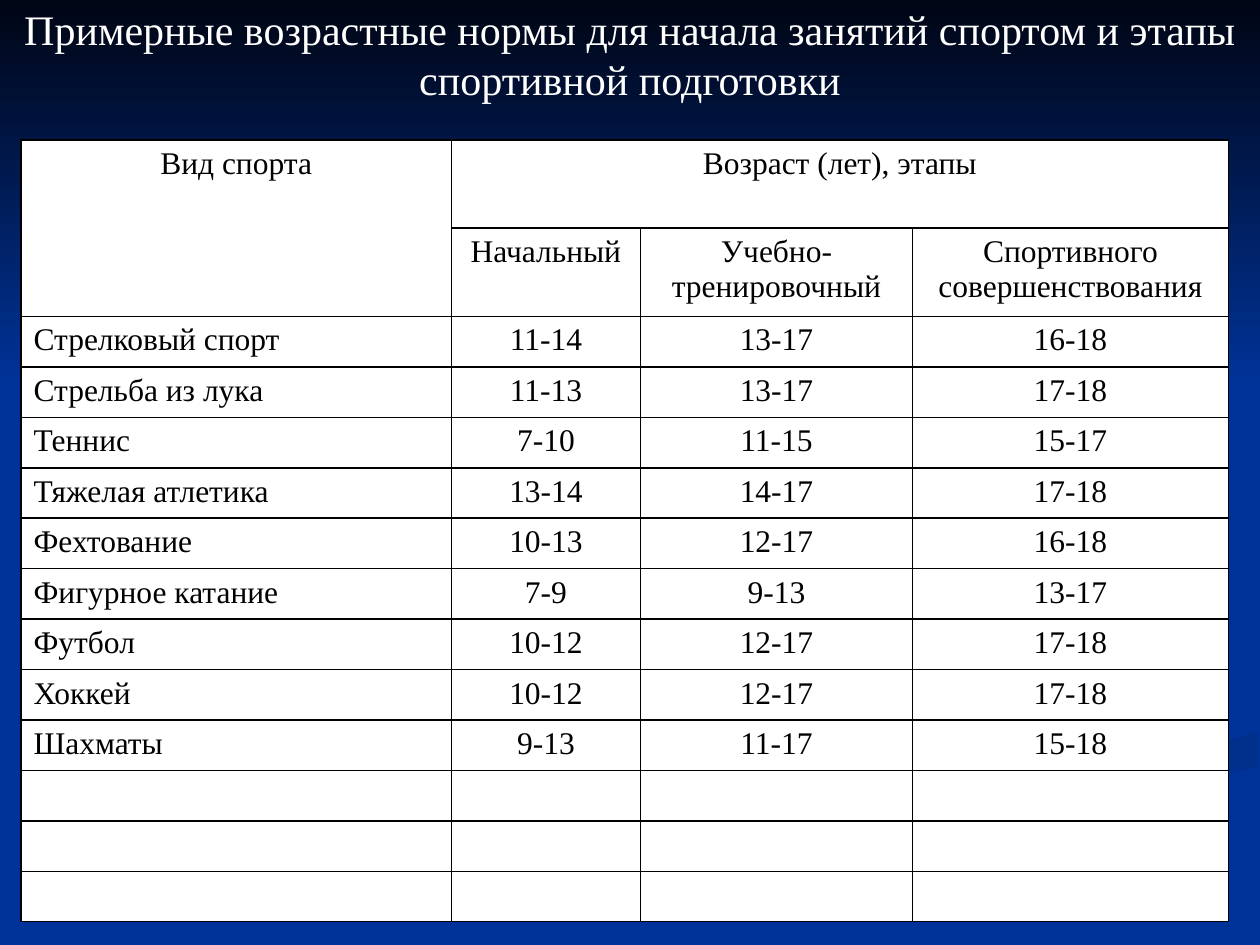
import pptx
import pptx.util
import pptx.dml.color
import pptx.enum.shapes
import pptx.enum.text
import pptx.oxml
import pptx.oxml.ns

Pt = pptx.util.Pt
RGB = pptx.dml.color.RGBColor.from_string
ALIGN = pptx.enum.text.PP_ALIGN

THEME = {
    "font": "Times New Roman", "title_size": 24, "table_size": 18, "empty_size": 12,
    "background": "003399", "night": "000514", "ribbon": "002F8C", "faint": "003193",
    "title": "FFFFFF", "cell": "FFFFFF", "ink": "000000",
}


def paint(shape, start, end, clockwise):
    """Fill a borderless shape with a two-colour gradient."""
    shape.shadow.inherit = False
    shape.line.fill.background()
    shape.fill.gradient()
    shape.fill.gradient_angle = -clockwise % 360
    for stop, colour in zip(shape.fill.gradient_stops, (start, end)):
        stop.color.rgb = RGB(THEME[colour])


def write(paragraph, text, size, colour, align):
    """Put one formatted run into a paragraph."""
    paragraph.alignment = align
    run = paragraph.add_run()
    run.text = text
    font_format = {"name": THEME["font"], "size": Pt(size), "bold": False}
    for key, value in font_format.items():
        setattr(run.font, key, value)
    run.font.color.rgb = RGB(colour)


presentation = pptx.Presentation()
presentation.slide_width, presentation.slide_height = Pt(720), Pt(540)
slide = presentation.slides.add_slide(presentation.slide_layouts[6])
slide.background.fill.solid()
slide.background.fill.fore_color.rgb = RGB(THEME["background"])

# Background ribbons: start colour, end colour, clockwise angle, outline
ribbons = [
    ("background", "faint", 0, [(414, 330), (440, 360), (562, 400), (503, 438), (216, 539),
                                (260, 539), (562, 436), (576, 418), (553, 394), (428, 349)]),
    ("background", "faint", 45, [(521, 334), (544, 364), (642, 398), (644, 436),
                                 (679, 410), (639, 385), (537, 353)]),
    ("ribbon", "background", 90, [(362, 539), (411, 539), (520, 491), (719, 438),
                                  (719, 418), (550, 466)]),
    ("faint", "background", 45, [(562, 331), (595, 357), (580, 340), (618, 319),
                                 (719, 302), (719, 289), (592, 312)]),
    ("ribbon", "background", 45, [(549, 168), (626, 215), (638, 251), (570, 282), (430, 315),
                                  (418, 341), (448, 360), (427, 338), (467, 311),
                                  (594, 289), (644, 248), (622, 210)]),
]
for start, end, clockwise, outline in ribbons:
    builder = slide.shapes.build_freeform(*outline[0], scale=Pt(1))
    builder.add_line_segments(outline[1:], close=True)
    paint(builder.convert_to_shape(), start, end, clockwise)

# Dark sky over the upper part
sky = slide.shapes.add_shape(pptx.enum.shapes.MSO_SHAPE.RECTANGLE, 0, 0, Pt(720), Pt(222))
paint(sky, "night", "background", 90)

# Title
heading = slide.shapes.add_textbox(0, Pt(-1.5), Pt(720), Pt(87)).text_frame
heading.word_wrap = True
write(heading.paragraphs[0],
      "Примерные возрастные нормы для начала занятий спортом и этапы спортивной подготовки",
      THEME["title_size"], THEME["title"], ALIGN.CENTER)

# Table of ages
age_rows = [
    ["Вид спорта", "Возраст (лет), этапы", "", ""],
    ["", "Начальный", "Учебно-тренировочный", "Спортивного совершенствования"],
    ["Стрелковый спорт", "11-14", "13-17", "16-18"],
    ["Стрельба из лука", "11-13", "13-17", "17-18"],
    ["Теннис", "7-10", "11-15", "15-17"],
    ["Тяжелая атлетика", "13-14", "14-17", "17-18"],
    ["Фехтование", "10-13", "12-17", "16-18"],
    ["Фигурное катание", "7-9", "9-13", "13-17"],
    ["Футбол", "10-12", "12-17", "17-18"],
    ["Хоккей", "10-12", "12-17", "17-18"],
    ["Шахматы", "9-13", "11-17", "15-18"],
] + [[""] * 4] * 3
header_rows = 2
column_widths = [246, 108, 155.5, 180.5]
row_heights = [50.4] * header_rows + [28.8] * (len(age_rows) - header_rows)

ages = slide.shapes.add_table(len(age_rows), len(column_widths), Pt(12), Pt(80),
                              Pt(sum(column_widths)), Pt(sum(row_heights))).table
for flag, value in {"first_row": False, "horz_banding": False}.items():
    setattr(ages, flag, value)
for column, width in zip(ages.columns, column_widths):
    column.width = Pt(width)
for row, height in zip(ages.rows, row_heights):
    row.height = Pt(height)
ages.cell(0, 0).merge(ages.cell(1, 0))
ages.cell(0, 1).merge(ages.cell(0, 3))

for r, texts in enumerate(age_rows):
    for c, text in enumerate(texts):
        cell = ages.cell(r, c)
        borders = cell._tc.get_or_add_tcPr()
        for side in ("lnL", "lnR", "lnT", "lnB"):
            borders.append(pptx.oxml.parse_xml(
                f'<a:{side} {pptx.oxml.ns.nsdecls("a")} w="{int(Pt(1))}"><a:solidFill>'
                f'<a:srgbClr val="{THEME["ink"]}"/></a:solidFill></a:{side}>'))
        cell.fill.solid()
        cell.fill.fore_color.rgb = RGB(THEME["cell"])
        paragraph = cell.text_frame.paragraphs[0]
        if text:
            sport_name = c == 0 and r >= header_rows
            write(paragraph, text, THEME["table_size"], THEME["ink"],
                  ALIGN.LEFT if sport_name else ALIGN.CENTER)
        else:
            # A small end mark keeps an empty row at its set height
            paragraph._p.get_or_add_endParaRPr().set("sz", str(THEME["empty_size"] * 100))

presentation.save("out.pptx")
